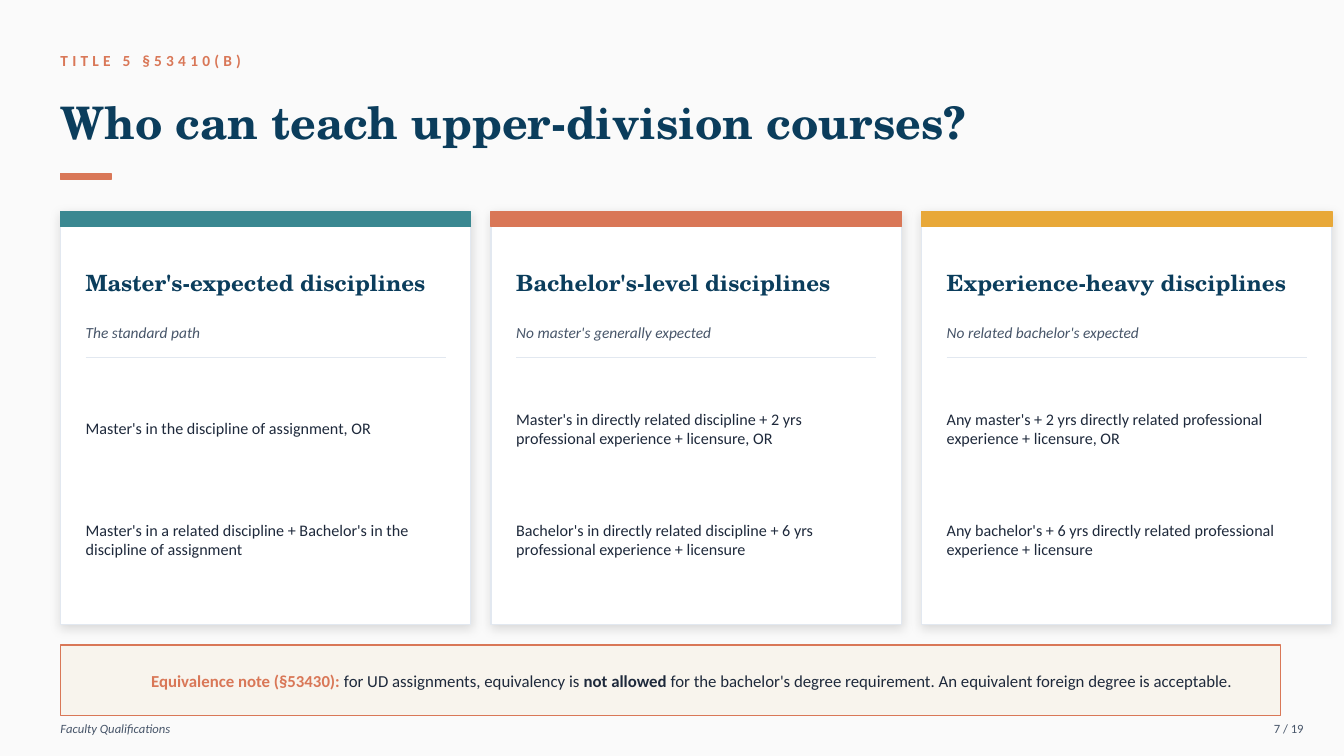
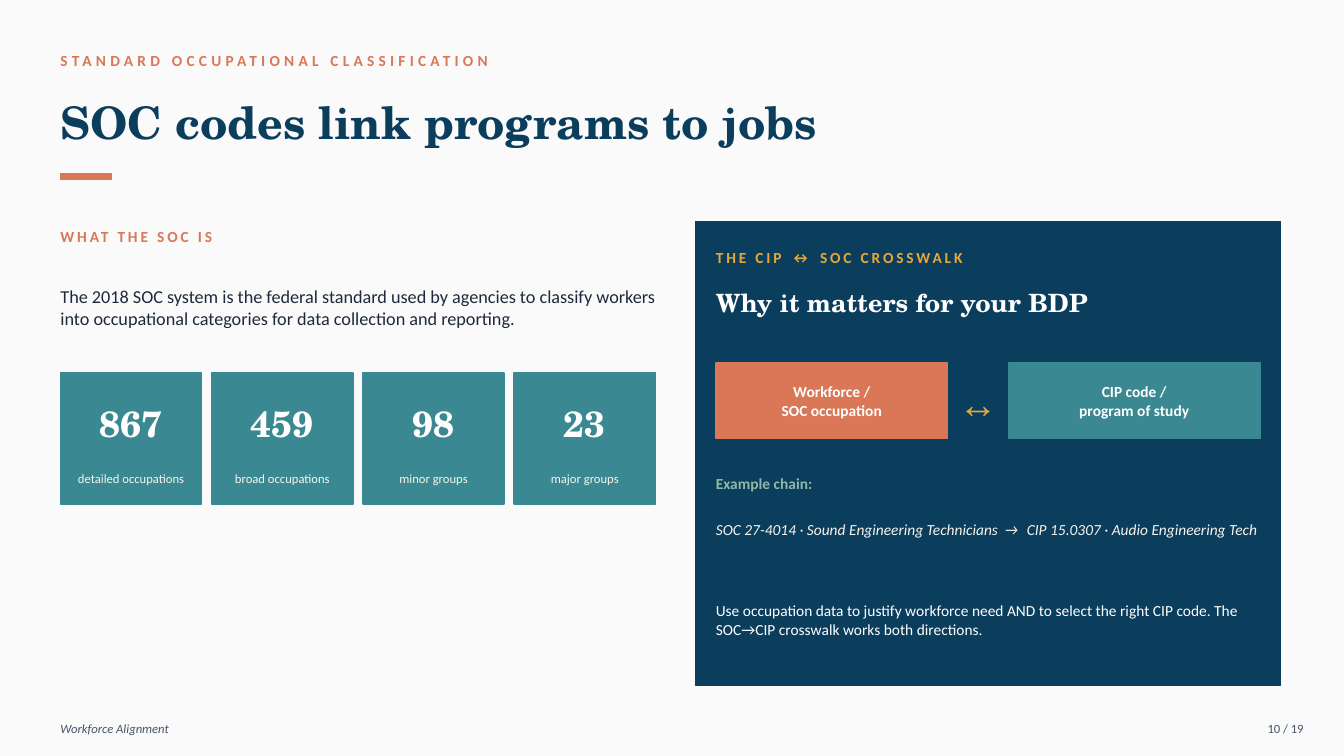
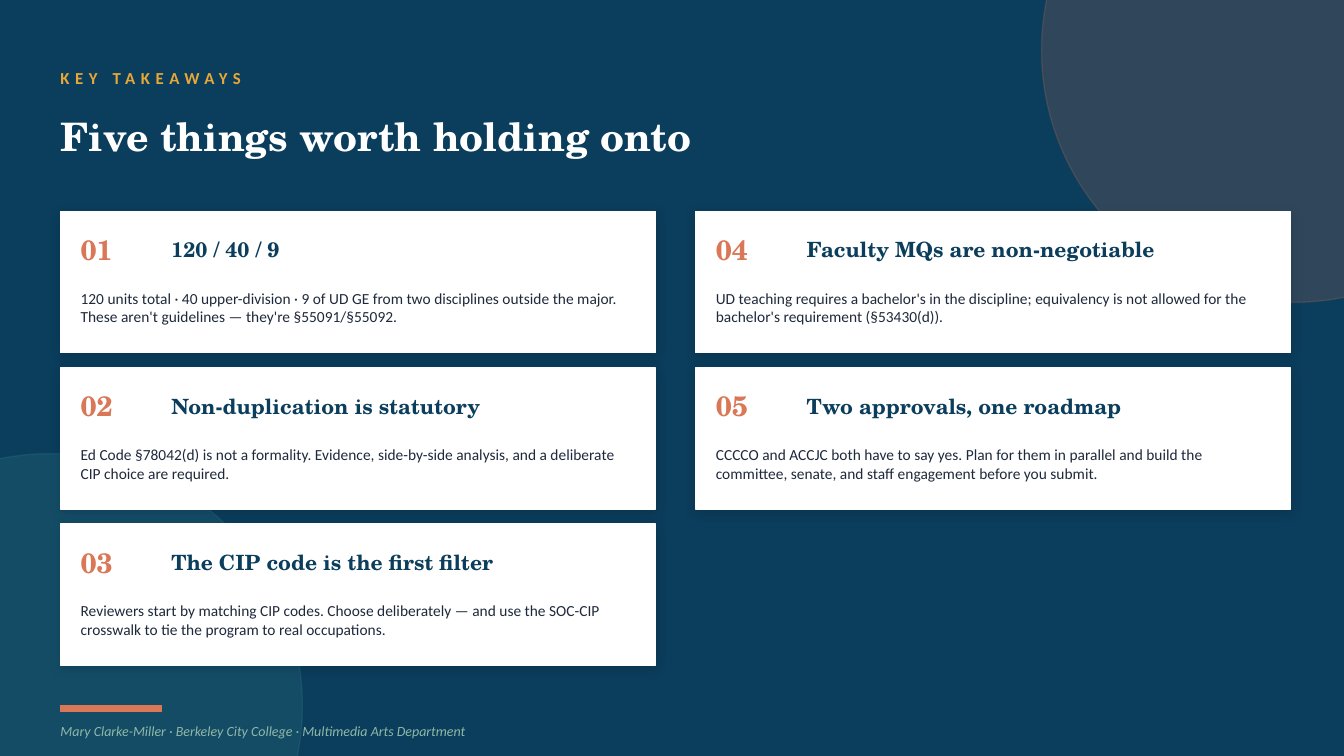
import pptx
import pptx.util
import pptx.dml.color
import pptx.enum.shapes
import pptx.enum.text
import pptx.oxml
import pptx.oxml.ns

PX = 9144
SERIF, SANS = "TeX Gyre Schola", "Calibri"
NAVY, TEAL, CORAL, GOLD, SAGE = "0B3D5C", "3A8891", "D97757", "E8A838", "8FB8A8"
WHITE, CREAM, PAPER, RULE, INK, SLATE = "FFFFFF", "F8F4ED", "FAFAFA", "E2E8F0", "1E293B", "475569"

hue = pptx.dml.color.RGBColor.from_string
qn = pptx.oxml.ns.qn
Kind = pptx.enum.shapes.MSO_SHAPE
Align = pptx.enum.text.PP_ALIGN
SHADE = (
    f'<a:outerShdw {pptx.oxml.ns.nsdecls("a")} blurRad="101600" dist="25400" dir="5400000" '
    'algn="bl" rotWithShape="0"><a:srgbClr val="000000"><a:alpha val="12000"/></a:srgbClr></a:outerShdw>'
)


def panel(slide, area, fill, edge=None, wide=1, kind=Kind.RECTANGLE, shade=False, alpha=None):
    box = slide.shapes.add_shape(kind, *[n * PX for n in area])
    box.fill.solid()
    box.fill.fore_color.rgb = hue(fill)
    box.line.color.rgb = hue(edge or fill)
    box.line.width = pptx.util.Pt(wide)
    box.shadow.inherit = False
    props = box._element.spPr
    if shade:
        props.find(qn("a:effectLst")).append(pptx.oxml.parse_xml(SHADE))
    if alpha:
        for tint in list(props.iter(qn("a:srgbClr"))):
            tint.append(tint.makeelement(qn("a:alpha"), {"val": str(alpha * 1000)}))
    return box


def text(slide, area, words, size, tone, face=SANS, bold=False, ital=False,
         align=Align.LEFT, space=0, box=None):
    if box is None:
        box = slide.shapes.add_textbox(0, 0, 0, 0)
    box.left, box.top, box.width, box.height = [n * PX for n in area]
    frame = box.text_frame
    frame.word_wrap = True
    frame.auto_size = pptx.enum.text.MSO_AUTO_SIZE.NONE
    frame.vertical_anchor = pptx.enum.text.MSO_ANCHOR.MIDDLE
    frame.margin_left = frame.margin_right = frame.margin_top = frame.margin_bottom = 0
    rows = words
    if isinstance(words, str):
        rows = [[(row, tone, bold, space)] for row in words.split("\n")]
    for i, row in enumerate(rows):
        para = frame.add_paragraph() if i else frame.paragraphs[0]
        para.alignment = align
        for part, shade, heavy, gap in row:
            run = para.add_run()
            run.text = part
            font = run.font
            font.name, font.size = face, pptx.util.Pt(size)
            font.bold, font.italic = heavy, ital
            font.color.rgb = hue(shade)
            if gap:
                run._r.get_or_add_rPr().set("spc", str(round(gap * 100)))


deck = pptx.Presentation()
deck.slide_width, deck.slide_height = 1333 * PX, 750 * PX
paper = deck.slide_master.background.fill
paper.solid()
paper.fore_color.rgb = hue(PAPER)
plain = deck.slide_layouts[5]

heads = [
    ("TITLE 5 §53410(B)", "Who can teach upper-division courses?", "Faculty Qualifications", 7),
    ("STANDARD OCCUPATIONAL CLASSIFICATION", "SOC codes link programs to jobs", "Workforce Alignment", 10),
]
pages = []
for topic, title, part, num in heads:
    page = deck.slides.add_slide(plain)
    text(page, (60, 45, 1000, 30), topic, 11, CORAL, bold=True, space=3)
    text(page, (60, 78, 1200, 85), title, 32, NAVY, SERIF, True, box=page.shapes.title)
    panel(page, (60, 172, 50, 6), CORAL)
    text(page, (60, 710, 780, 25), part, 9, SLATE, ital=True)
    text(page, (1223, 710, 70, 25), f"{num} / 19", 9, SLATE, align=Align.RIGHT)
    pages.append(page)
staff, jobs = pages

paths = [
    (TEAL, "Master's-expected disciplines", "The standard path",
     "Master's in the discipline of assignment, OR",
     "Master's in a related discipline + Bachelor's in the discipline of assignment"),
    (CORAL, "Bachelor's-level disciplines", "No master's generally expected",
     "Master's in directly related discipline + 2 yrs professional experience + licensure, OR",
     "Bachelor's in directly related discipline + 6 yrs professional experience + licensure"),
    (GOLD, "Experience-heavy disciplines", "No related bachelor's expected",
     "Any master's + 2 yrs directly related professional experience + licensure, OR",
     "Any bachelor's + 6 yrs directly related professional experience + licensure"),
]
for i, (tone, name, hint, first, second) in enumerate(paths):
    x = 60 + i * 427
    left = x + 25
    panel(staff, (x, 210, 407, 410), WHITE, RULE, 0.75, shade=True)
    panel(staff, (x, 210, 407, 15), tone)
    text(staff, (left, 245, 357, 70), name, 16, NAVY, SERIF, True)
    text(staff, (left, 315, 357, 30), hint, 11, SLATE, ital=True)
    rule = staff.shapes.add_connector(
        pptx.enum.shapes.MSO_CONNECTOR.STRAIGHT, left * PX, 355 * PX, (left + 357) * PX, 355 * PX)
    rule.line.color.rgb = hue(RULE)
    rule.line.width = pptx.util.Pt(0.75)
    props = rule._element.spPr
    props.append(props.makeelement(qn("a:effectLst"), {}))
    text(staff, (left, 375, 357, 100), first, 11.5, INK)
    text(staff, (left, 485, 357, 100), second, 11.5, INK)

panel(staff, (60, 640, 1210, 70), CREAM, CORAL)
note = [
    ("Equivalence note (§53430): ", CORAL, True, 0),
    ("for UD assignments, equivalency is ", INK, False, 0),
    ("not allowed", INK, True, 0),
    (" for the bachelor's degree requirement. An equivalent foreign degree is acceptable.", INK, False, 0),
]
text(staff, (150, 640, 1110, 70), [note], 12, INK)

text(jobs, (60, 220, 600, 30), "WHAT THE SOC IS", 11, CORAL, bold=True, space=2)
text(jobs, (60, 255, 600, 100),
     "The 2018 SOC system is the federal standard used by agencies to classify workers "
     "into occupational categories for data collection and reporting.", 13, INK)
stats = [("867", "detailed occupations"), ("459", "broad occupations"),
         ("98", "minor groups"), ("23", "major groups")]
for i, (count, label) in enumerate(stats):
    x = 60 + i * 150
    panel(jobs, (x, 370, 140, 130), TEAL)
    text(jobs, (x, 385, 140, 70), count, 26, WHITE, SERIF, True, align=Align.CENTER)
    text(jobs, (x, 455, 140, 40), label, 9, CREAM, align=Align.CENTER)

panel(jobs, (690, 220, 580, 460), NAVY)
text(jobs, (710, 240, 540, 30), "THE CIP ↔ SOC CROSSWALK", 11, GOLD, bold=True, space=2)
text(jobs, (710, 275, 540, 50), "Why it matters for your BDP", 18, WHITE, SERIF, True)
ends = [(710, 230, CORAL, "Workforce /\nSOC occupation"), (1000, 250, TEAL, "CIP code /\nprogram of study")]
for x, wide, tone, label in ends:
    area = (x, 360, wide, 75)
    text(jobs, area, label, 11, WHITE, bold=True, align=Align.CENTER, box=panel(jobs, area, tone))
text(jobs, (940, 370, 60, 60), "↔", 28, GOLD, "Arial", True, align=Align.CENTER)
text(jobs, (710, 465, 540, 30), "Example chain:", 11, SAGE, bold=True)
chain = [
    ("SOC 27-4014 · Sound Engineering Technicians", CREAM, False, 0),
    (" → ", CREAM, False, 1.7),
    ("CIP 15.0307 · Audio Engineering Tech", CREAM, False, 0),
]
text(jobs, (710, 495, 540, 60), [chain], 11, CREAM, ital=True)
text(jobs, (710, 565, 540, 100),
     "Use occupation data to justify workforce need AND to select the right CIP code. "
     "The SOC→CIP crosswalk works both directions.", 11, WHITE)

close = deck.slides.add_slide(plain)
night = close.background.fill
night.solid()
night.fore_color.rgb = hue(NAVY)
panel(close, (-200, 450, 500, 500), TEAL, kind=Kind.OVAL, alpha=20)
panel(close, (1033, -200, 500, 500), CORAL, kind=Kind.OVAL, alpha=18)
text(close, (60, 60, 1200, 35), "KEY TAKEAWAYS", 12, GOLD, bold=True, space=4)
text(close, (60, 100, 1200, 70), "Five things worth holding onto", 28, WHITE, SERIF, True,
     box=close.shapes.title)
points = [
    ("120 / 40 / 9",
     "120 units total · 40 upper-division · 9 of UD GE from two disciplines outside the major. "
     "These aren't guidelines — they're §55091/§55092."),
    ("Non-duplication is statutory",
     "Ed Code §78042(d) is not a formality. Evidence, side-by-side analysis, "
     "and a deliberate CIP choice are required."),
    ("The CIP code is the first filter",
     "Reviewers start by matching CIP codes. Choose deliberately — and use the SOC-CIP "
     "crosswalk to tie the program to real occupations."),
    ("Faculty MQs are non-negotiable",
     "UD teaching requires a bachelor's in the discipline; equivalency is not allowed "
     "for the bachelor's requirement (§53430(d))."),
    ("Two approvals, one roadmap",
     "CCCCO and ACCJC both have to say yes. Plan for them in parallel and build the "
     "committee, senate, and staff engagement before you submit."),
]
for i, (name, body) in enumerate(points):
    col, row = divmod(i, 3)
    x, y = 60 + col * 630, 210 + row * 155
    panel(close, (x, y, 590, 140), WHITE, shade=True)
    text(close, (x + 20, y + 15, 90, 45), f"{i + 1:02}", 20, CORAL, SERIF, True)
    text(close, (x + 110, y + 15, 460, 45), name, 15, NAVY, SERIF, True)
    text(close, (x + 20, y + 60, 550, 70), body, 11, INK)
panel(close, (60, 700, 100, 6), CORAL)
text(close, (60, 710, 1200, 30),
     "Mary Clarke-Miller · Berkeley City College · Multimedia Arts Department", 10, SAGE, ital=True)

deck.save("out.pptx")
